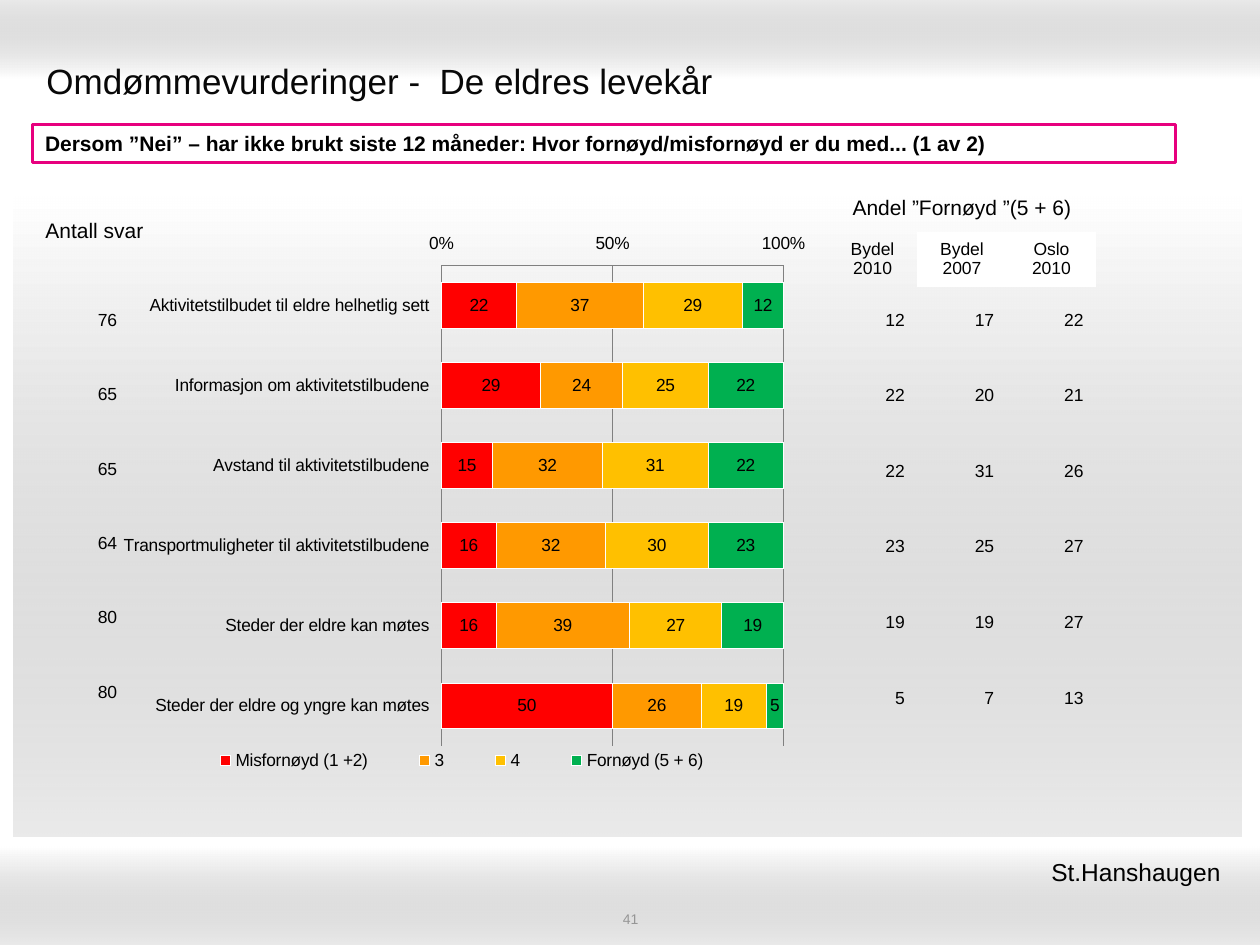
from lxml import etree
from pptx import Presentation
from pptx.chart.data import CategoryChartData
from pptx.dml.color import RGBColor
from pptx.enum.chart import XL_CHART_TYPE, XL_LEGEND_POSITION, XL_TICK_LABEL_POSITION, XL_TICK_MARK
from pptx.enum.shapes import MSO_SHAPE
from pptx.enum.text import MSO_ANCHOR, PP_ALIGN
from pptx.oxml import parse_xml
from pptx.oxml.ns import nsdecls, qn
from pptx.util import Inches, Pt

LEFT, CENTER, RIGHT = PP_ALIGN.LEFT, PP_ALIGN.CENTER, PP_ALIGN.RIGHT
TOP, MIDDLE = MSO_ANCHOR.TOP, MSO_ANCHOR.MIDDLE
LOW = XL_TICK_LABEL_POSITION.LOW
NO_TICK, TICK_INSIDE = XL_TICK_MARK.NONE, XL_TICK_MARK.INSIDE
FONT = "Arial"
BLACK, WHITE, GRAY, PINK = "000000", "FFFFFF", "808080", "E7007E"
NO_TABLE_STYLE = "{2D5ABB26-0587-4C30-8999-92F81FD0307C}"

# left, top, width, height, clockwise gradient angle
PANELS = [
    (0, 0, 10, 0.62, 270),
    (0, 6.72, 10, 0.78, 90),
    (0.11, 1.56, 9.74, 5.08, 90),
]
# text, box, format, alignment, anchor, inset
TEXTS = [
    ("Omdømmevurderinger -  De eldres levekår", (0.27, 0.36, 9.45, 0.55),
     {"size": 20, "color": "080808"}, LEFT, MIDDLE, 0.1),
    ("41", (3.42, 7.22, 3.17, 0.14), {"size": 8, "color": "969696"}, CENTER, MIDDLE, 0),
    ("St.Hanshaugen ", (6.1, 6.75, 3.74, 0.34), {"size": 14}, RIGHT, TOP, 0.1),
]
BANNER = ("Dersom ”Nei” – har ikke brukt siste 12 måneder: "
          "Hvor fornøyd/misfornøyd er du med... (1 av 2)")
CATEGORIES = [
    "Aktivitetstilbudet til eldre helhetlig sett",
    "Informasjon om aktivitetstilbudene",
    "Avstand til aktivitetstilbudene",
    "Transportmuligheter til aktivitetstilbudene",
    "Steder der eldre kan møtes",
    "Steder der eldre og yngre kan møtes",
]
SERIES = [
    ("Misfornøyd (1 +2)", "FF0000", (22, 29, 15, 16, 16, 50)),
    ("3", "FF9900", (37, 24, 32, 32, 39, 26)),
    ("4", "FFC000", (29, 25, 31, 30, 27, 19)),
    ("Fornøyd (5 + 6)", "00B050", (12, 22, 22, 23, 19, 5)),
]
SATISFIED = [(12, 17, 22), (22, 20, 21), (22, 31, 26), (23, 25, 27), (19, 19, 27), (5, 7, 13)]
SATISFIED_HEADER = [
    ("Andel ”Fornøyd ”(5 + 6)", "", ""),
    ("Bydel\n2010", "Bydel\n2007", "Oslo\n2010"),
]
ANSWERS = [(76,), (65,), (65,), (64,), (80,), (80,)]


def rgb(color):
    return RGBColor.from_string(color)


def format_font(font, size, color=BLACK, bold=False):
    for name, value in {"name": FONT, "size": Pt(size), "bold": bold}.items():
        setattr(font, name, value)
    font.color.rgb = rgb(color)


def write(frame, text, style, alignment):
    frame.text = text
    for paragraph in frame.paragraphs:
        paragraph.alignment = alignment
        format_font(paragraph.runs[0].font, **style)


def add_rectangle(slide, box):
    shape = slide.shapes.add_shape(MSO_SHAPE.RECTANGLE, *map(Inches, box))
    shape.shadow.inherit = False
    return shape


def add_panel(slide, *box, angle):
    """Rectangle fading from white to a mostly transparent gray."""
    shape = add_rectangle(slide, box)
    shape.line.fill.background()
    shape.fill.gradient()
    shape.fill.gradient_angle = 360 - angle
    for stop, color in zip(shape.fill.gradient_stops, (WHITE, "999999")):
        stop.color.rgb = rgb(color)
    gray = shape.element.xpath(".//a:gs[2]/a:srgbClr")[0]
    etree.SubElement(gray, qn("a:alpha"), val="20000")


def add_text(slide, text, box, style, alignment, anchor, inset):
    frame = slide.shapes.add_textbox(*map(Inches, box)).text_frame
    frame.word_wrap = True
    frame.vertical_anchor = anchor
    frame.margin_left = frame.margin_right = Inches(inset)
    if not inset:
        frame.margin_top = frame.margin_bottom = 0
    write(frame, text, style, alignment)


def add_banner(slide):
    shape = add_rectangle(slide, (0.26, 0.99, 9.07, 0.3))
    shape.fill.solid()
    shape.fill.fore_color.rgb = rgb(WHITE)
    shape.line.color.rgb = rgb(PINK)
    shape.line.width = Pt(2)
    shape.text_frame.word_wrap = True
    write(shape.text_frame, BANNER, {"size": 12, "bold": True}, LEFT)


def add_plain_table(slide, rows, left, top, column_width, heights, alignment, size=10):
    count = len(rows[0])
    frame = slide.shapes.add_table(
        len(rows), count, Inches(left), Inches(top),
        Inches(column_width * count), Inches(sum(heights)))
    table = frame.table
    table.first_row = table.horz_banding = False
    frame.element.xpath(".//a:tableStyleId")[0].text = NO_TABLE_STYLE
    for column in table.columns:
        column.width = Inches(column_width)
    for row, height, values in zip(table.rows, heights, rows):
        row.height = Inches(height)
        for cell, value in zip(row.cells, values):
            cell.vertical_anchor = MIDDLE
            cell.fill.background()
            if value != "":
                write(cell.text_frame, str(value), {"size": size}, alignment)
    return table


def add_header_table(slide):
    table = add_plain_table(slide, SATISFIED_HEADER, 6.57, 1.47, 0.71, (0.37, 0.43), CENTER)
    title = table.cell(0, 0)
    title.merge(table.cell(0, 2))
    format_font(title.text_frame.paragraphs[0].runs[0].font, 12)
    for column in (1, 2):
        fill = table.cell(1, column).fill
        fill.solid()
        fill.fore_color.rgb = rgb(WHITE)


def layout_xml(x, y, width, height, inner=False):
    target = '<c:layoutTarget val="inner"/>' if inner else ""
    return parse_xml(
        f'<c:layout {nsdecls("c")}><c:manualLayout>{target}'
        '<c:xMode val="edge"/><c:yMode val="edge"/>'
        f'<c:x val="{x}"/><c:y val="{y}"/><c:w val="{width}"/><c:h val="{height}"/>'
        '</c:manualLayout></c:layout>')


def place(element, layout, after=None):
    """Replace the layout of a chart part."""
    for old in element.findall(qn("c:layout")):
        element.remove(old)
    element.insert(0 if after is None else element.index(element.find(qn(after))) + 1, layout)


def add_bar_chart(slide):
    data = CategoryChartData()
    data.categories = CATEGORIES
    for name, _, values in SERIES:
        data.add_series(name, values)
    box = map(Inches, (0.98, 1.79, 5.51, 4.54))
    chart = slide.shapes.add_chart(XL_CHART_TYPE.BAR_STACKED, *box, data).chart
    chart.has_title = False
    format_font(chart.font, 10)
    plot = chart.plots[0]
    for name, value in {"gap_width": 75, "overlap": 100, "vary_by_categories": False}.items():
        setattr(plot, name, value)
    for series, (_, color, _) in zip(plot.series, SERIES):
        series.format.fill.solid()
        series.format.fill.fore_color.rgb = rgb(color)
        series.format.line.color.rgb = rgb(WHITE)
        labels = series.data_labels
        for name, value in {"show_value": True, "number_format": "0",
                            "number_format_is_linked": False}.items():
            setattr(labels, name, value)
        format_font(labels.font, 10)
    axes = [
        (chart.category_axis, {"reverse_order": True, "major_tick_mark": NO_TICK}),
        (chart.value_axis, {"minimum_scale": 0, "maximum_scale": 100, "major_unit": 50,
                            "major_tick_mark": TICK_INSIDE, "has_major_gridlines": True}),
    ]
    for axis, settings in axes:
        for name, value in {**settings, "tick_label_position": LOW,
                            "minor_tick_mark": NO_TICK}.items():
            setattr(axis, name, value)
        axis.format.line.color.rgb = rgb(GRAY)
    chart.value_axis.major_gridlines.format.line.color.rgb = rgb(GRAY)
    tick_labels = chart.value_axis.tick_labels
    tick_labels.number_format = r"General\%"
    tick_labels.number_format_is_linked = False
    chart.has_legend = True
    chart.legend.position = XL_LEGEND_POSITION.BOTTOM
    chart.legend.include_in_layout = False
    format_font(chart.legend.font, 10)
    place(chart.element.find(".//" + qn("c:plotArea")), layout_xml(0.45, 0.07, 0.5, 0.84, True))
    place(chart.element.find(".//" + qn("c:legend")),
          layout_xml(0.06, 0.91, 0.84, 0.05), "c:legendPos")


def main():
    presentation = Presentation()
    presentation.slide_width, presentation.slide_height = Inches(10), Inches(7.5)
    slide = presentation.slides.add_slide(presentation.slide_layouts[6])
    for *box, angle in PANELS:
        add_panel(slide, *box, angle=angle)
    for text in TEXTS:
        add_text(slide, *text)
    add_banner(slide)
    add_bar_chart(slide)
    add_plain_table(slide, SATISFIED, 6.57, 2.24, 0.71, [0.6] * 6, RIGHT)
    add_header_table(slide)
    add_plain_table(slide, ANSWERS, 0.51, 2.25, 0.52, [0.59] * 6, RIGHT)
    add_plain_table(slide, [("Antall svar",)], 0.04, 1.54, 1.42, [0.59], CENTER, size=12)
    presentation.save("out.pptx")


if __name__ == "__main__":
    main()
